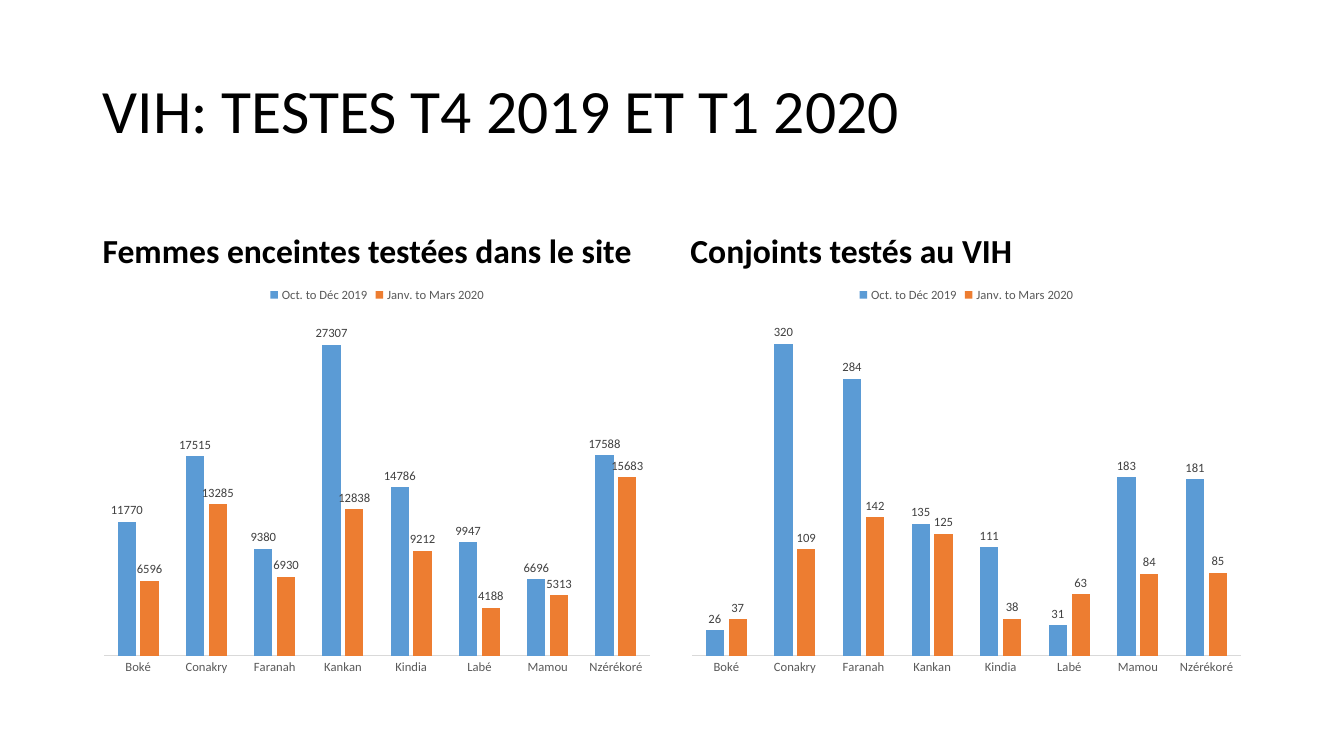
from pptx import Presentation
from pptx.chart.data import CategoryChartData
from pptx.dml.color import RGBColor
from pptx.enum.chart import XL_CHART_TYPE, XL_LABEL_POSITION, XL_LEGEND_POSITION, XL_TICK_MARK
from pptx.enum.text import MSO_ANCHOR
from pptx.util import Inches, Pt

COLUMNS = XL_CHART_TYPE.COLUMN_CLUSTERED
OUTSIDE_END = XL_LABEL_POSITION.OUTSIDE_END
LEGEND_TOP = XL_LEGEND_POSITION.TOP
NO_TICK = XL_TICK_MARK.NONE
MIDDLE = MSO_ANCHOR.MIDDLE
BOTTOM = MSO_ANCHOR.BOTTOM

FONT = "Calibri"
REGIONS = ["Boké", "Conakry", "Faranah", "Kankan", "Kindia", "Labé", "Mamou", "Nzérékoré"]
QUARTERS = [("Oct. to Déc 2019", "5B9BD5"), ("Janv. to Mars 2020", "ED7D31")]
PANELS = [
    ("Femmes enceintes testées dans le site", 0.92, 5.64, 30000,
     [[11770, 17515, 9380, 27307, 14786, 9947, 6696, 17588],
      [6596, 13285, 6930, 12838, 9212, 4188, 5313, 15683]]),
    ("Conjoints testés au VIH", 6.75, 5.67, 350,
     [[26, 320, 284, 135, 111, 31, 183, 181],
      [37, 109, 142, 125, 38, 63, 84, 85]]),
]


def rgb(value):
    return RGBColor.from_string(value)


def set_font(font, size, color="000000", bold=False):
    font.name = FONT
    font.size = Pt(size)
    font.bold = bold
    font.color.rgb = rgb(color)


def add_text(s, text, left, top, width, height, size=24, bold=False, anchor=BOTTOM, before=0):
    sp = s.shapes.add_textbox(Inches(left), Inches(top), Inches(width), Inches(height))
    tf = sp.text_frame
    tf.word_wrap = True
    tf.vertical_anchor = anchor
    p = tf.paragraphs[0]
    p.line_spacing = 0.9
    p.space_before = Pt(before)
    r = p.add_run()
    r.text = text
    set_font(r.font, size, bold=bold)


def style_axes(chart, maximum):
    axis = chart.category_axis
    axis.major_tick_mark = NO_TICK
    axis.minor_tick_mark = NO_TICK
    axis.format.line.color.rgb = rgb("D9D9D9")
    axis.format.line.width = Pt(0.75)
    set_font(axis.tick_labels.font, 9, "595959")
    values = chart.value_axis
    values.visible = False
    values.has_major_gridlines = False
    values.minimum_scale = 0
    values.maximum_scale = maximum


def style_series(series, color):
    series.format.fill.solid()
    series.format.fill.fore_color.rgb = rgb(color)
    series.invert_if_negative = False
    labels = series.data_labels
    labels.show_value = True
    labels.position = OUTSIDE_END
    set_font(labels.font, 9, "404040")


def add_columns(s, left, top, width, height, maximum, counts):
    data = CategoryChartData()
    data.categories = REGIONS
    for (name, _), values in zip(QUARTERS, counts):
        data.add_series(name, values)
    chart = s.shapes.add_chart(
        COLUMNS, Inches(left), Inches(top), Inches(width), Inches(height), data).chart
    set_font(chart.font, 10)
    chart.has_title = False
    chart.has_legend = True
    chart.legend.position = LEGEND_TOP
    chart.legend.include_in_layout = False
    set_font(chart.legend.font, 9, "595959")
    style_axes(chart, maximum)
    plot = chart.plots[0]
    plot.vary_by_categories = False
    plot.gap_width = 150
    plot.overlap = -25
    for series, (_, color) in zip(plot.series, QUARTERS):
        style_series(series, color)


def main():
    prs = Presentation()
    prs.slide_width = Inches(13.33)
    prs.slide_height = Inches(7.5)
    s = prs.slides.add_slide(prs.slide_layouts[6])
    add_text(s, "VIH: TESTES T4 2019 ET T1 2020", 0.92, 0.4, 11.5, 1.45, size=44, anchor=MIDDLE)
    for heading, left, width, maximum, counts in PANELS:
        add_text(s, heading, left, 1.84, width, 0.9, bold=True, before=10)
        add_columns(s, left, 2.74, width, 4.03, maximum, counts)
    prs.save("out.pptx")


if __name__ == "__main__":
    main()
